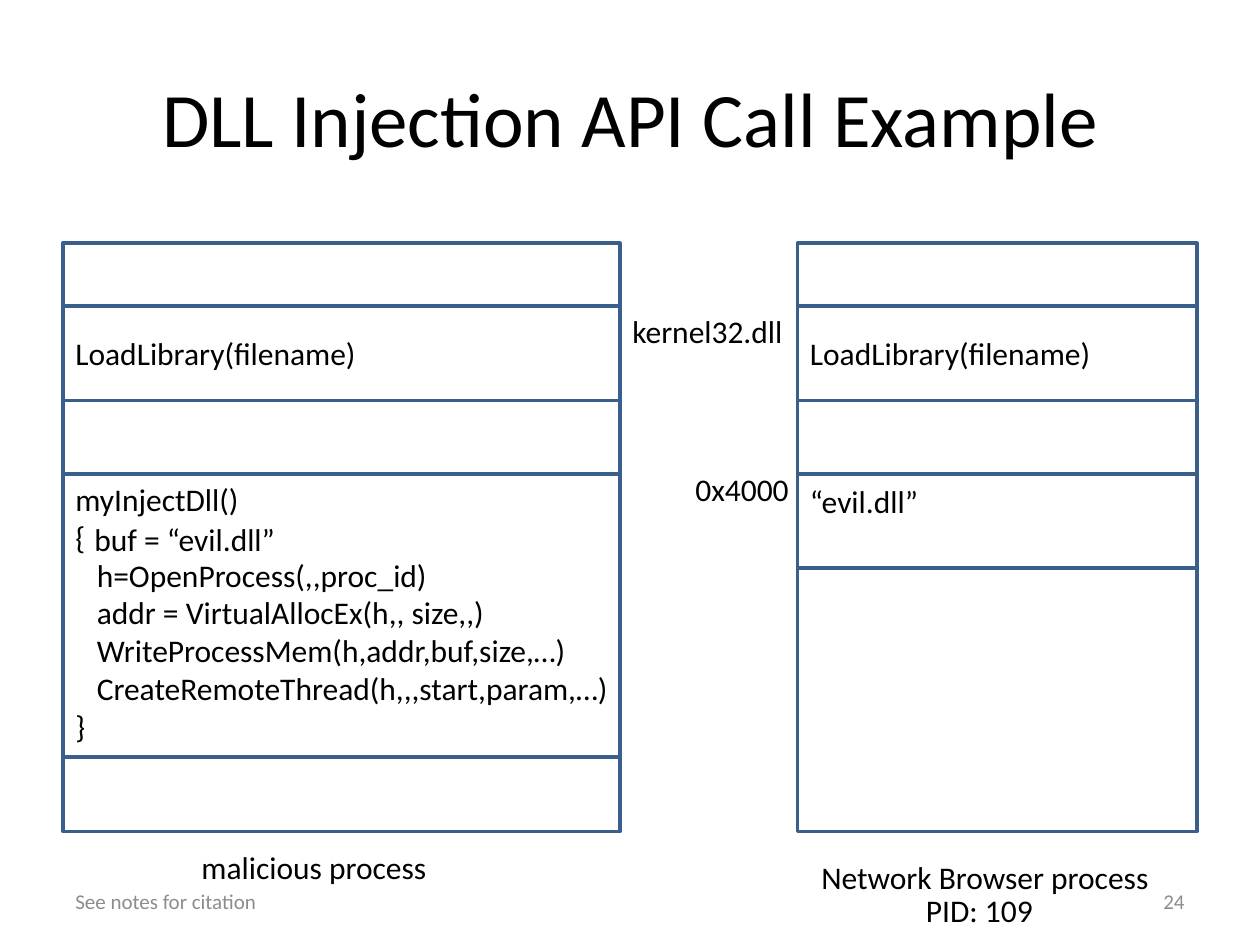
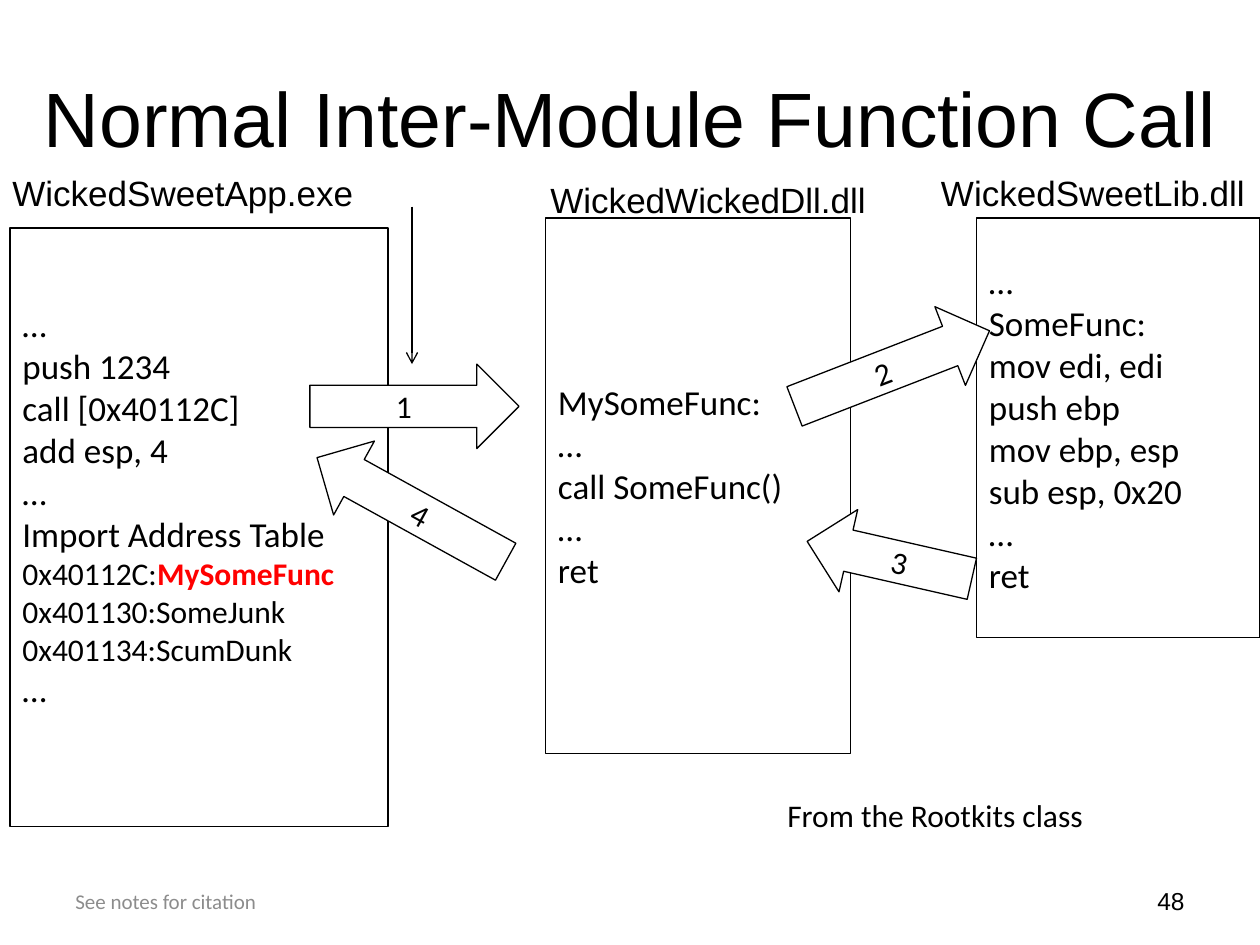
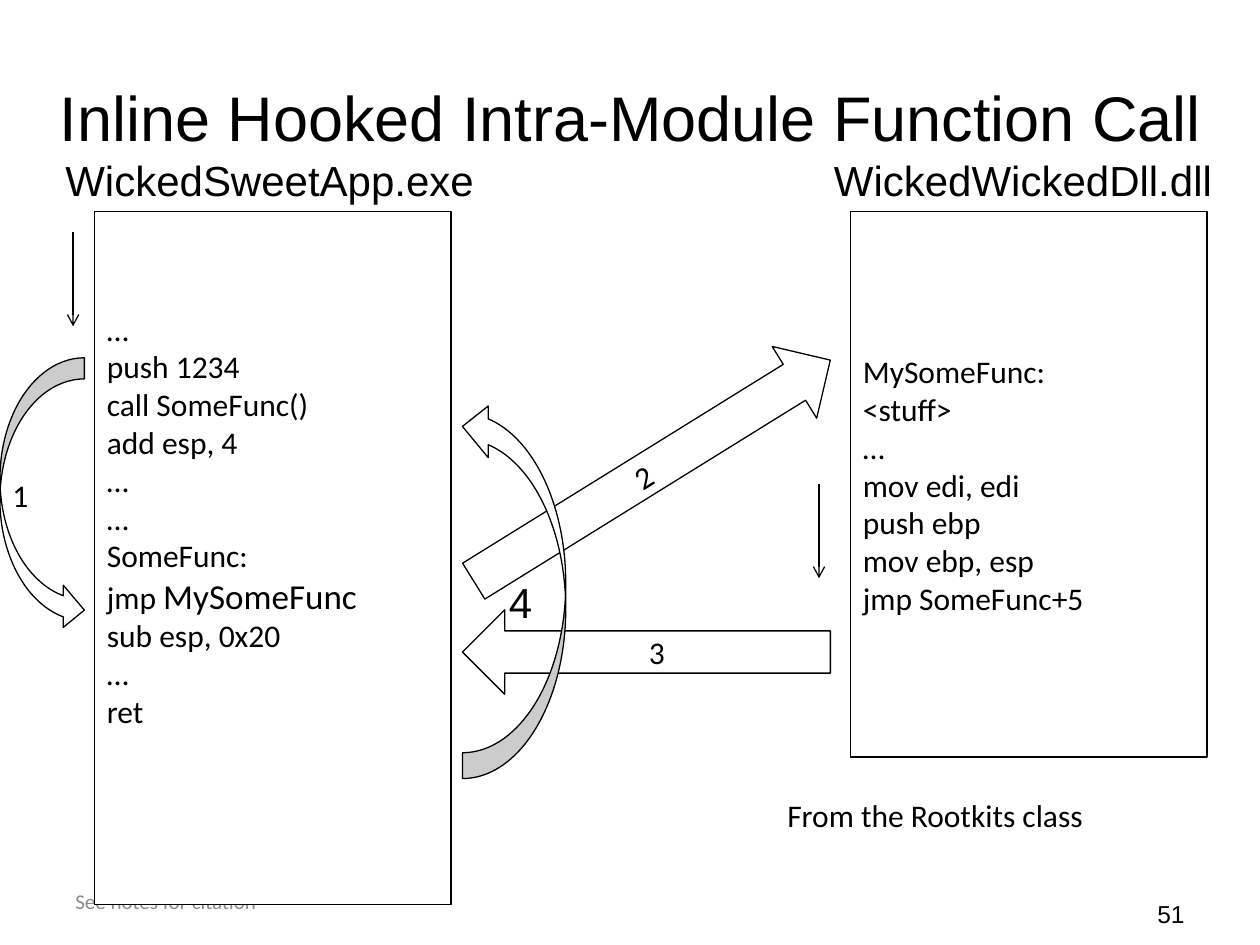
from dataclasses import dataclass

from lxml import etree
from pptx import Presentation
from pptx.dml.color import RGBColor
from pptx.enum.shapes import MSO_CONNECTOR, MSO_SHAPE
from pptx.enum.text import MSO_ANCHOR, PP_ALIGN
from pptx.oxml.ns import qn
from pptx.util import Inches, Pt

COLORS = {"ink": "000000", "paper": "FFFFFF", "muted": "8C8C8C", "memory": "3A5F8C", "alert": "FF0000"}
BODY, HEADING = "Calibri", "Arial"
LINE_HEIGHT = 1.22  # Calibri line height in ems


@dataclass
class Box:
    left: float
    top: float
    width: float
    height: float

    def inner(self, dx, dy, width, height):
        return Box(self.left + dx, self.top + dy, width, height)

    def lengths(self):
        return [Inches(n) for n in (self.left, self.top, self.width, self.height)]


@dataclass
class Span:
    text: str
    size: int = 18
    color: str = "ink"
    bold: bool = False


TITLE = Box(0.23, 0.3, 9.55, 1.25)
CITATION = Box(0.5, 6.95, 2.33, 0.4)
NUMBER = Box(7.17, 6.95, 2.33, 0.4)
CREDIT = Box(6.15, 6.27, 3.35, 0.4)


# Shared helpers
def rgb(name):
    return RGBColor.from_string(COLORS[name])


def write(frame, lines, size=18, font=BODY, color="ink", align=PP_ALIGN.LEFT, anchor=MSO_ANCHOR.TOP):
    """Fill a frame; a line is a string or a list of spans."""
    frame.word_wrap = True
    frame.vertical_anchor = anchor
    for index, line in enumerate(lines):
        para = frame.paragraphs[0] if index == 0 else frame.add_paragraph()
        para.alignment = align
        for part in [Span(line, size, color)] if isinstance(line, str) else line:
            span = para.add_run()
            span.text = part.text
            span.font.name = font
            span.font.size = Pt(part.size)
            span.font.bold = part.bold
            span.font.color.rgb = rgb(part.color)


def add_text(page, box, lines, **style):
    frame = page.shapes.add_textbox(*box.lengths()).text_frame
    write(frame, [lines] if isinstance(lines, str) else lines, **style)
    return frame


def add_outline(page, kind, box, fill="paper", line="ink", weight=0.75):
    shape = page.shapes.add_shape(kind, *box.lengths())
    shape.shadow.inherit = False
    if fill:
        shape.fill.solid()
        shape.fill.fore_color.rgb = rgb(fill)
    else:
        shape.fill.background()
    shape.line.color.rgb = rgb(line)
    shape.line.width = Pt(weight)
    return shape


def add_frame(deck, title, number, title_size=44, title_font=HEADING, number_box=NUMBER, **number_style):
    """Start a slide with its title, citation and slide number."""
    page = deck.slides.add_slide(deck.slide_layouts[6])
    middle = MSO_ANCHOR.MIDDLE
    add_text(page, TITLE, title, size=title_size, font=title_font, align=PP_ALIGN.CENTER, anchor=middle)
    add_text(page, CITATION, "See notes for citation", size=12, color="muted", anchor=middle)
    style = {"size": 14, "font": HEADING, **number_style}
    add_text(page, number_box, number, align=PP_ALIGN.RIGHT, anchor=middle, **style)
    return page


# Parts of the memory slide
def memory_column(page, box, bands):
    """Draw a process image with bands given as (offset, height)."""
    for offset, height in [(0, box.height), *bands]:
        band = box.inner(0, offset, box.width, height)
        add_outline(page, MSO_SHAPE.RECTANGLE, band, fill=None, line="memory", weight=2)
    add_text(page, box.inner(0, 0.67, 3.1, 0.4), "LoadLibrary(filename)")


def malicious_process(page, box):
    memory_column(page, box, [(0.5, 0.75), (1.83, 2.25)])
    calls = ["h=OpenProcess(,,proc_id)", "addr = VirtualAllocEx(h,, size,,)",
             "WriteProcessMem(h,addr,buf,size,…)", "CreateRemoteThread(h,,,start,param,…)"]
    code = add_text(page, box.inner(0, 1.83, 4.67, 2.22), ["myInjectDll()", "{", *calls, "}"])
    for para in code.paragraphs[2:-1]:
        properties = para._p.get_or_add_pPr()
        properties.set("marL", str(Inches(0.17)))
        properties.set("indent", "0")
    add_text(page, box.inner(0.15, 2.15, 2.69, 0.4), "buf = “evil.dll”")
    add_text(page, box.inner(1, 4.75, 2.58, 0.4), "malicious process")


def target_process(page, box):
    memory_column(page, box, [(0.5, 0.75), (1.83, 0.75)])
    labels = [
        (-1.41, 0.5, 2.08, "kernel32.dll"),
        (-0.91, 1.75, 1.08, "0x4000"),
        (0, 1.85, 2, "“evil.dll”"),
        (0.09, 4.83, 2.83, "Network Browser process"),
        (0.92, 5.09, 1.16, "PID: 109"),
    ]
    for dx, dy, width, text in labels:
        add_text(page, box.inner(dx, dy, width, 0.4), text)


# Parts of the call slides
def module_box(page, box, name, name_box, lines, size=18, name_size=20, lift=0):
    """Draw a module's code; lift is the space kept below it, in lines."""
    shape = add_outline(page, MSO_SHAPE.RECTANGLE, box)
    write(shape.text_frame, lines, size=size, anchor=MSO_ANCHOR.MIDDLE)
    shape.text_frame.margin_bottom = Inches(0.05) + Pt(lift * size * LINE_HEIGHT)
    label = add_text(page, box.inner(*name_box), name, size=name_size, font=HEADING)
    label.word_wrap = False


def step_arrow(page, kind, box, number, rotation=0, align=PP_ALIGN.CENTER):
    arrow = add_outline(page, kind, box)
    arrow.rotation = rotation
    write(arrow.text_frame, [number], align=align, anchor=MSO_ANCHOR.MIDDLE)


def flow_line(page, x, top, length):
    """Draw a thin downward arrow."""
    ends = [Inches(n) for n in (x, top, x, top + length)]
    line = page.shapes.add_connector(MSO_CONNECTOR.STRAIGHT, *ends)
    line.line.color.rgb = rgb("ink")
    line.line.width = Pt(0.75)
    etree.SubElement(line.line._get_or_add_ln(), qn("a:tailEnd"), type="arrow")
    etree.SubElement(line._element.spPr, qn("a:effectLst"))


def return_curve(page, box, number):
    curve = add_outline(page, MSO_SHAPE.CURVED_LEFT_ARROW, box)
    curve._element.spPr.find(qn("a:xfrm")).set("flipV", "1")
    add_text(page, box.inner(0.27, 1.35, 0.64, 0.5), number, size=24, font=HEADING)


def add_credit(page):
    add_text(page, CREDIT, "From the Rootkits class")


# Slides
def injection_slide(deck):
    page = add_frame(deck, "DLL Injection API Call Example", "24", title_font=BODY,
                     size=12, font=BODY, color="muted")
    target_process(page, Box(6.33, 1.93, 3.17, 4.67))
    malicious_process(page, Box(0.5, 1.93, 4.42, 4.67))


def inter_module_slide(deck):
    page = add_frame(deck, "Normal Inter-Module Function Call", "48")
    app_code = [
        "…", "push 1234", "call [0x40112C]", "add esp, 4", "…", "Import Address Table",
        [Span("0x40112C:"), Span("MySomeFunc", color="alert", bold=True)],
        [Span("0x401130:SomeJunk")], [Span("0x401134:ScumDunk")], "…",
    ]
    hook_code = ["MySomeFunc:", "…", "call SomeFunc()", "…", "ret"]
    lib_code = ["…", "SomeFunc:", "mov edi, edi", "push ebp", "mov ebp, esp", "sub esp, 0x20", "…", "ret"]
    module_box(page, Box(0.08, 1.81, 3, 4.75), "WickedSweetApp.exe", (-0.08, -0.5, 2.93, 0.44),
               app_code, size=20, lift=1)
    module_box(page, Box(4.33, 1.73, 2.42, 4.25), "WickedWickedDll.dll", (-0.06, -0.36, 2.73, 0.44),
               hook_code, size=20)
    module_box(page, Box(7.75, 1.73, 2.25, 3.33), "WickedSweetLib.dll", (-0.38, -0.42, 2.63, 0.44),
               lib_code, size=20)
    flow_line(page, 3.27, 1.64, 1.25)
    right, left = MSO_SHAPE.RIGHT_ARROW, MSO_SHAPE.LEFT_ARROW
    step_arrow(page, right, Box(2.46, 2.89, 1.66, 0.67), "1")
    step_arrow(page, right, Box(6.25, 2.59, 1.66, 0.67), "2", rotation=338.8)
    step_arrow(page, left, Box(6.39, 4.11, 1.34, 0.67), "3", rotation=12.8)
    step_arrow(page, left, Box(2.41, 3.71, 1.71, 0.67), "4", rotation=28.9)
    add_credit(page)


def inline_hook_slide(deck):
    page = add_frame(deck, "Inline Hooked Intra-Module Function Call", "51", title_size=36,
                     number_box=NUMBER.inner(0, 0.1, NUMBER.width, NUMBER.height))
    app_code = [
        "…", "push 1234", "call SomeFunc()", "add esp, 4", "…", "…", "SomeFunc:",
        [Span("jmp "), Span("MySomeFunc", size=20)], "sub esp, 0x20", "…", "ret",
    ]
    hook_code = ["MySomeFunc:", "<stuff>", "…", "mov edi, edi", "push ebp", "mov ebp, esp", "jmp SomeFunc+5"]
    module_box(page, Box(0.75, 1.68, 2.83, 5.5), "WickedSweetApp.exe", (-0.33, -0.5, 3.48, 0.51),
               app_code, name_size=24, lift=2)
    module_box(page, Box(6.75, 1.68, 2.83, 4.33), "WickedWickedDll.dll", (-0.23, -0.5, 3.23, 0.51),
               hook_code, name_size=24)
    flow_line(page, 0.58, 1.84, 0.75)
    flow_line(page, 6.5, 3.84, 0.75)
    step_arrow(page, MSO_SHAPE.CURVED_RIGHT_ARROW, Box(0, 2.84, 0.67, 2.17), "1", align=PP_ALIGN.LEFT)
    step_arrow(page, MSO_SHAPE.RIGHT_ARROW, Box(3.51, 3.4, 3.33, 0.67), "2", rotation=328.2)
    step_arrow(page, MSO_SHAPE.LEFT_ARROW, Box(3.67, 4.84, 2.92, 0.67), "3")
    return_curve(page, Box(3.67, 3.18, 0.82, 3), "4")
    add_credit(page)


def main():
    deck = Presentation()
    deck.slide_width, deck.slide_height = Inches(10), Inches(7.5)
    injection_slide(deck)
    inter_module_slide(deck)
    inline_hook_slide(deck)
    deck.save("out.pptx")


if __name__ == "__main__":
    main()
